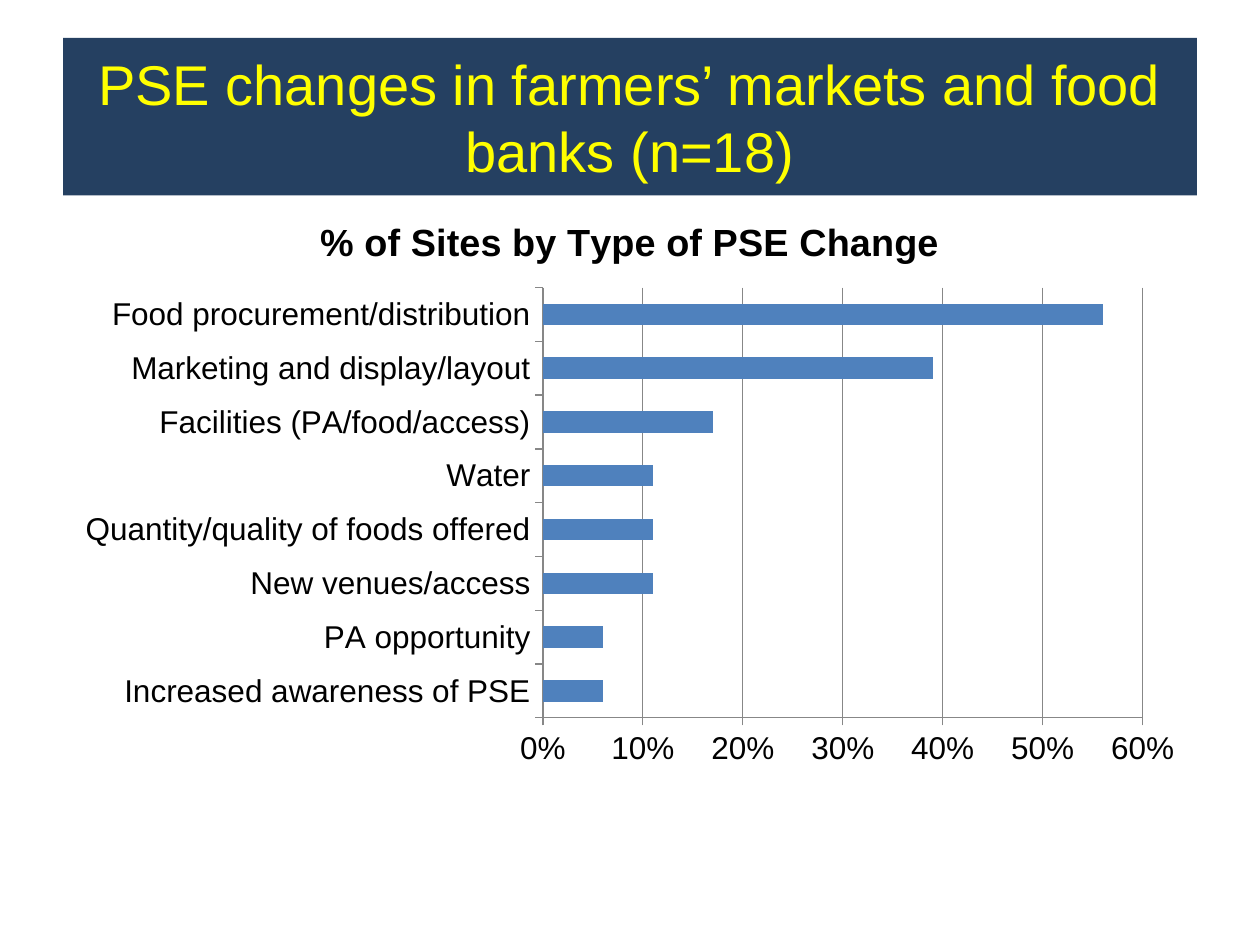
from typing import NamedTuple

from pptx import Presentation
from pptx.chart.chart import Chart
from pptx.chart.data import CategoryChartData
from pptx.dml.color import RGBColor
from pptx.enum.chart import XL_CHART_TYPE as ChartType, XL_TICK_MARK as TickMark
from pptx.enum.text import MSO_ANCHOR as Anchor, PP_ALIGN as Align
from pptx.slide import Slide
from pptx.util import Inches, Pt

FONT = "Arial"
COLORS = {
    "banner": "254061",
    "heading": "FFFF00",
    "text": "000000",
    "bar": "4F81BD",
    "axis": "878787",
}


class PseChange(NamedTuple):
    kind: str
    site_share: float


# Listed from the bottom bar to the top one
PSE_CHANGES = [
    PseChange("Increased awareness of PSE", 0.06),
    PseChange("PA opportunity", 0.06),
    PseChange("New venues/access", 0.11),
    PseChange("Quantity/quality of foods offered", 0.11),
    PseChange("Water", 0.11),
    PseChange("Facilities (PA/food/access)", 0.17),
    PseChange("Marketing and display/layout", 0.39),
    PseChange("Food procurement/distribution", 0.56),
]


def color(name: str) -> RGBColor:
    return RGBColor.from_string(COLORS[name])


def style_font(font, size: float, color_name: str, bold: bool = False) -> None:
    font.name = FONT
    font.size = Pt(size)
    font.bold = bold
    font.color.rgb = color(color_name)


def style_line(line) -> None:
    line.color.rgb = color("axis")
    line.width = Pt(0.75)


def add_heading(slide: Slide, wording: str) -> None:
    banner = slide.shapes.title
    banner.left, banner.top = Inches(0.5), Inches(0.3)
    banner.width, banner.height = Inches(9), Inches(1.25)
    banner.fill.solid()
    banner.fill.fore_color.rgb = color("banner")

    frame = banner.text_frame
    frame.word_wrap = True
    frame.vertical_anchor = Anchor.MIDDLE
    frame.margin_left = frame.margin_right = Inches(0.1)
    frame.margin_top = frame.margin_bottom = Inches(0.1)
    paragraph = frame.paragraphs[0]
    paragraph.alignment = Align.CENTER
    run = paragraph.add_run()
    run.text = wording
    style_font(run.font, 32, "heading")


def add_pse_chart(slide: Slide, changes: list[PseChange]) -> Chart:
    shares = CategoryChartData(number_format="0%")
    shares.categories = [change.kind for change in changes]
    shares.add_series("Series 1", [change.site_share for change in changes])
    chart = slide.shapes.add_chart(
        ChartType.BAR_CLUSTERED,
        Inches(0.5), Inches(1.53), Inches(9), Inches(4.64), shares,
    ).chart
    style_font(chart.font, 18, "text")
    chart.has_legend = False

    # Chart title
    chart.has_title = True
    chart.chart_title.include_in_layout = False
    run = chart.chart_title.text_frame.paragraphs[0].add_run()
    run.text = "% of Sites by Type of PSE Change"
    style_font(run.font, 21.6, "text", bold=True)

    # Bars
    plot = chart.plots[0]
    plot.gap_width = 150
    plot.vary_by_categories = False
    bars = plot.series[0].format.fill
    bars.solid()
    bars.fore_color.rgb = color("bar")

    # Axes and gridlines
    for axis in (chart.category_axis, chart.value_axis):
        axis.major_tick_mark = TickMark.OUTSIDE
        axis.minor_tick_mark = TickMark.NONE
        style_line(axis.format.line)
    share_axis = chart.value_axis
    share_axis.minimum_scale, share_axis.maximum_scale = 0, 0.6
    share_axis.major_unit = 0.1
    share_axis.tick_labels.number_format = "0%"
    share_axis.tick_labels.number_format_is_linked = False
    share_axis.has_major_gridlines = True
    style_line(share_axis.major_gridlines.format.line)
    return chart


def main() -> None:
    deck = Presentation()
    deck.slide_width, deck.slide_height = Inches(10), Inches(7.5)
    slide = deck.slides.add_slide(deck.slide_layouts[5])
    add_heading(slide, "PSE changes in farmers’ markets and food banks (n=18)")
    add_pse_chart(slide, PSE_CHANGES)
    deck.save("out.pptx")


if __name__ == "__main__":
    main()
